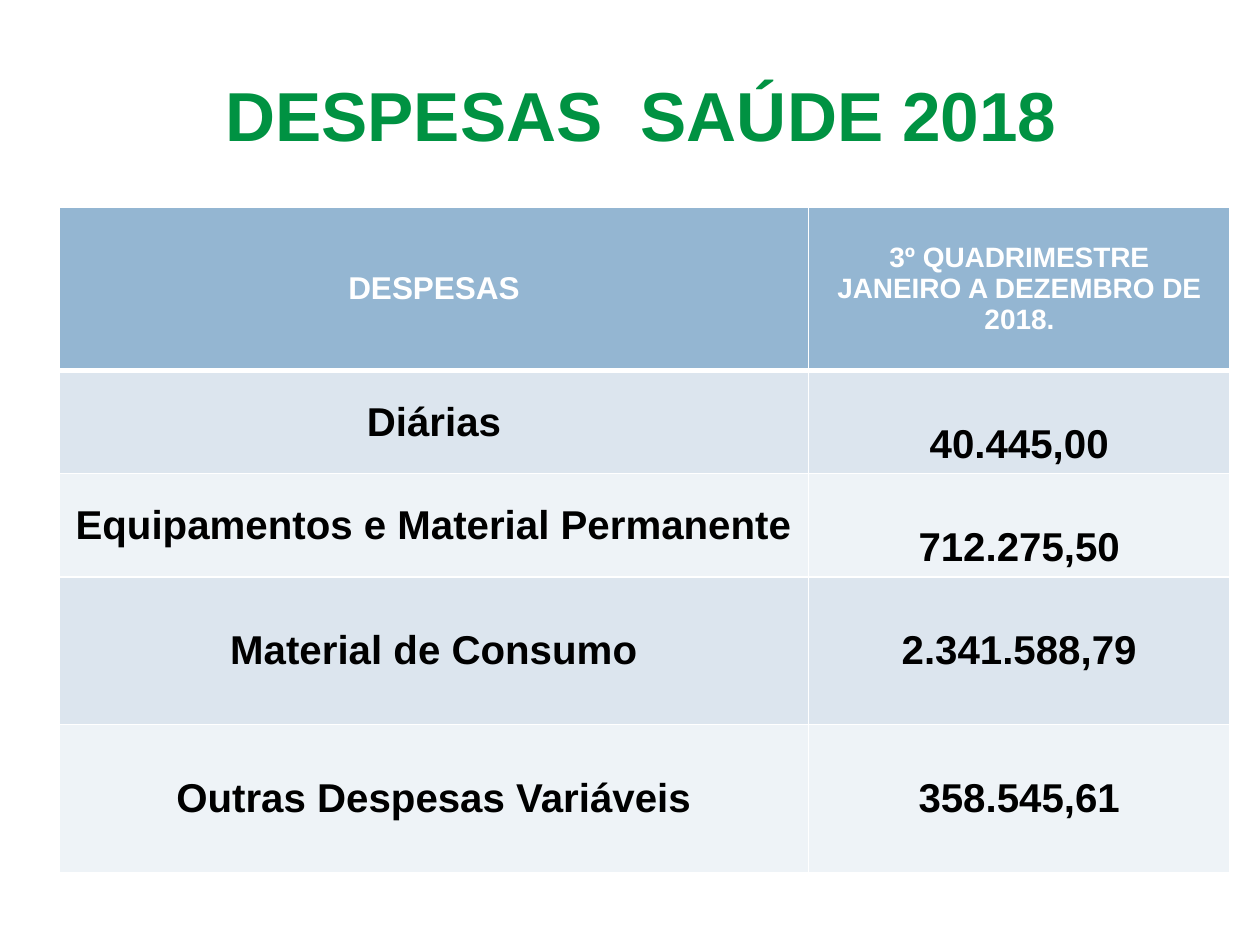
from pptx import Presentation
from pptx.dml.color import RGBColor
from pptx.enum.text import MSO_ANCHOR as Anchor, PP_ALIGN as Align
from pptx.oxml import parse_xml
from pptx.oxml.ns import nsdecls
from pptx.util import Cm, Pt

COLORS = {
    "title": "009242", "header": "94B6D2", "band_dark": "DCE5EE",
    "band_light": "EEF3F7", "text": "000000", "white": "FFFFFF",
}

HEADER = ["DESPESAS", "3º QUADRIMESTRE\nJANEIRO A DEZEMBRO DE 2018."]
HEADER_SIZES = [18, 16]
EXPENSES = [
    ("Diárias", "40.445,00"),
    ("Equipamentos e Material Permanente", "712.275,50"),
    ("Material de Consumo", "2.341.588,79"),
    ("Outras Despesas Variáveis", "358.545,61"),
]
COLUMN_WIDTHS = [15.1, 8.5]
ROW_HEIGHTS = [3.3, 2.08, 2.08, 2.98, 2.98]
LOW_VALUE_ROWS = (1, 2)  # values that sit at the foot of their cell


class SlideBuilder:
    """Holds the style and the current slide."""

    font_name = "Arial"

    def __init__(self, presentation):
        self.slide = presentation.slides.add_slide(presentation.slide_layouts[5])

    def set_text(self, text_frame, text, size, color):
        text_frame.text = text
        text_frame.word_wrap = True
        formats = {"name": self.font_name, "size": Pt(size), "bold": True}
        for paragraph in text_frame.paragraphs:
            paragraph.alignment = Align.CENTER
            for run in paragraph.runs:
                for name, value in formats.items():
                    setattr(run.font, name, value)
                run.font.color.rgb = RGBColor.from_string(COLORS[color])

    def title(self, text, left, top, width, height):
        shape = self.slide.shapes.title
        box = {"left": left, "top": top, "width": width, "height": height}
        for name, value in box.items():
            setattr(shape, name, Cm(value))
        self.set_text(shape.text_frame, text, 39.6, "title")
        shape.text_frame.vertical_anchor = Anchor.MIDDLE

    def borders(self, cell, widths):
        properties = cell._tc.get_or_add_tcPr()
        for side, width in widths.items():
            properties.append(parse_xml(
                f'<a:ln{side} {nsdecls("a")} w="{Pt(width)}"><a:solidFill>'
                f'<a:srgbClr val="{COLORS["white"]}"/></a:solidFill></a:ln{side}>'))

    def cell(self, cell, text, size, color, fill, anchor, widths):
        self.set_text(cell.text_frame, text, size, color)
        cell.vertical_anchor = anchor
        self.borders(cell, widths)
        cell.fill.solid()
        cell.fill.fore_color.rgb = RGBColor.from_string(COLORS[fill])

    def table(self, rows, left, top):
        table = self.slide.shapes.add_table(
            len(rows), len(COLUMN_WIDTHS), Cm(left), Cm(top),
            Cm(sum(COLUMN_WIDTHS)), Cm(sum(ROW_HEIGHTS))).table
        for column, width in zip(table.columns, COLUMN_WIDTHS):
            column.width = Cm(width)
        for row, height in zip(table.rows, ROW_HEIGHTS):
            row.height = Cm(height)

        for i, texts in enumerate(rows):
            for j, text in enumerate(texts):
                widths = {"L": 1, "R": 1, "T": 3 if i == 1 else 1,
                          "B": 3 if i == 0 else 1}
                low = j == 1 and i in LOW_VALUE_ROWS
                anchor = Anchor.BOTTOM if low else Anchor.MIDDLE
                if i == 0:
                    look = HEADER_SIZES[j], "white", "header"
                else:
                    look = 23, "text", "band_dark" if i % 2 else "band_light"
                self.cell(table.cell(i, j), text, *look, anchor, widths)


def main():
    presentation = Presentation()
    presentation.slide_width, presentation.slide_height = Cm(25.4), Cm(19.05)
    builder = SlideBuilder(presentation)

    # Heading
    builder.title("DESPESAS  SAÚDE 2018", 1.4, 1.4, 23.06, 1.8)

    # Expense table
    builder.table([HEADER, *EXPENSES], 1.2, 4.17)

    presentation.save("out.pptx")


if __name__ == "__main__":
    main()
